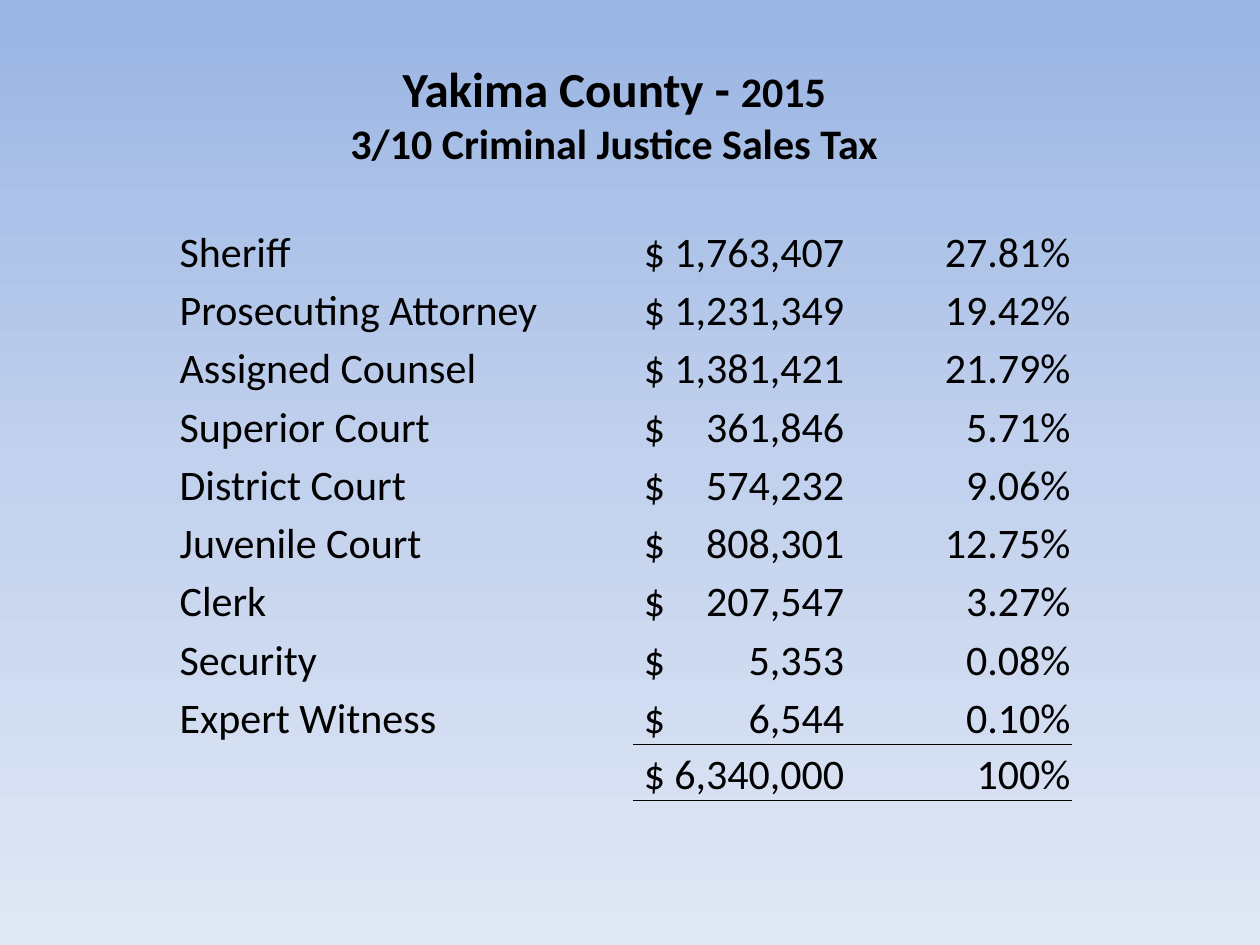
"""Build the Yakima County 2015 criminal justice sales tax slide."""
from copy import deepcopy
from dataclasses import dataclass

from lxml.etree import SubElement
from pptx import Presentation
from pptx.dml.color import RGBColor
from pptx.enum.text import MSO_ANCHOR as Anchor, PP_ALIGN as Align
from pptx.oxml.ns import qn
from pptx.util import Pt


@dataclass(frozen=True)
class Theme:
    font: str = "Calibri"
    ink: str = "000000"
    gradient: tuple = ((0, "9AB5E4"), (0.5, "C2D1ED"), (1, "E1E8F5"))
    heading: int = 28
    body: int = 24


theme = Theme()
PLAIN_TABLE_STYLE = "{2D5ABB26-0587-4C30-8999-92F81FD0307C}"
TITLE_LINES = [
    [("Yakima County - ", theme.heading), ("2015", theme.body)],
    [("3/10 Criminal Justice Sales Tax", theme.body)],
]
ALLOCATIONS = [
    ("Sheriff", "1,763,407", "27.81%"),
    ("Prosecuting Attorney", "1,231,349", "19.42%"),
    ("Assigned Counsel", "1,381,421", "21.79%"),
    ("Superior Court", "361,846", "5.71%"),
    ("District Court", "574,232", "9.06%"),
    ("Juvenile Court", "808,301", "12.75%"),
    ("Clerk", "207,547", "3.27%"),
    ("Security", "5,353", "0.08%"),
    ("Expert Witness", "6,544", "0.10%"),
    ("", "6,340,000", "100%"),
]
LAST_ITEM = len(ALLOCATIONS) - 2
COLUMN_WIDTHS = [260, 158.4, 92]
ROW_HEIGHTS = [33.3] * (LAST_ITEM + 1) + [32, 34]


def add_run(paragraph, text, size, bold=False):
    run = paragraph.add_run()
    run.text = text
    run.font.name = theme.font
    run.font.size = Pt(size)
    run.font.bold = bold
    run.font.color.rgb = RGBColor.from_string(theme.ink)


def add_border(cell, side):
    properties = cell._tc.get_or_add_tcPr()
    line = SubElement(properties, qn(f"a:{side}"), w=str(Pt(1)))
    properties.insert(0, line)
    fill = SubElement(line, qn("a:solidFill"))
    SubElement(fill, qn("a:srgbClr"), val=theme.ink)


presentation = Presentation()
presentation.slide_width = Pt(720)
presentation.slide_height = Pt(540)
slide = presentation.slides.add_slide(presentation.slide_layouts[5])

background = slide.background.fill
background.gradient()
background.gradient_angle = 270
stop_list = slide.element.find(f".//{qn('a:gsLst')}")
stop_list.insert(1, deepcopy(stop_list[0]))
for stop, (position, color) in zip(background.gradient_stops, theme.gradient):
    stop.position = position
    stop.color.rgb = RGBColor.from_string(color)

title = slide.shapes.title
title.left, title.top, title.width, title.height = Pt(156), Pt(30), Pt(390), Pt(70.6)
title_frame = title.text_frame
title_frame.word_wrap = True
title_frame.vertical_anchor = Anchor.TOP
for index, runs in enumerate(TITLE_LINES):
    paragraph = title_frame.add_paragraph() if index else title_frame.paragraphs[0]
    paragraph.alignment = Align.CENTER
    for text, size in runs:
        add_run(paragraph, text, size, bold=True)

frame = slide.shapes.add_table(
    len(ROW_HEIGHTS), len(COLUMN_WIDTHS),
    Pt(102), Pt(126), Pt(sum(COLUMN_WIDTHS)), Pt(sum(ROW_HEIGHTS)),
)
table = frame.table
table.first_row = table.horz_banding = False
table._tbl.tblPr.find(qn("a:tableStyleId")).text = PLAIN_TABLE_STYLE
for column, width in zip(table.columns, COLUMN_WIDTHS):
    column.width = Pt(width)
for row, height in zip(table.rows, ROW_HEIGHTS):
    row.height = Pt(height)
for cell in table.iter_cells():
    cell.fill.background()

for row_index, (department, amount, share) in enumerate(ALLOCATIONS):
    for column_index, text in enumerate((department, f"$\t{amount}", share)):
        if not text:
            continue
        cell = table.cell(row_index, column_index)
        cell.vertical_anchor = Anchor.BOTTOM
        cell.margin_left = Pt(6 if column_index == 1 else 0.7)
        cell.margin_right = cell.margin_top = Pt(0.7)
        cell.margin_bottom = Pt(0)
        paragraph = cell.text_frame.paragraphs[0]
        paragraph.alignment = Align.RIGHT if column_index == 2 else Align.LEFT
        add_run(paragraph, text, theme.body)
        if column_index == 1:
            tabs = SubElement(paragraph._p.get_or_add_pPr(), qn("a:tabLst"))
            SubElement(tabs, qn("a:tab"), pos=str(Pt(114.5)), algn="r")
        if column_index and row_index >= LAST_ITEM:
            add_border(cell, "lnB" if row_index == LAST_ITEM else "lnT")

presentation.save("out.pptx")
